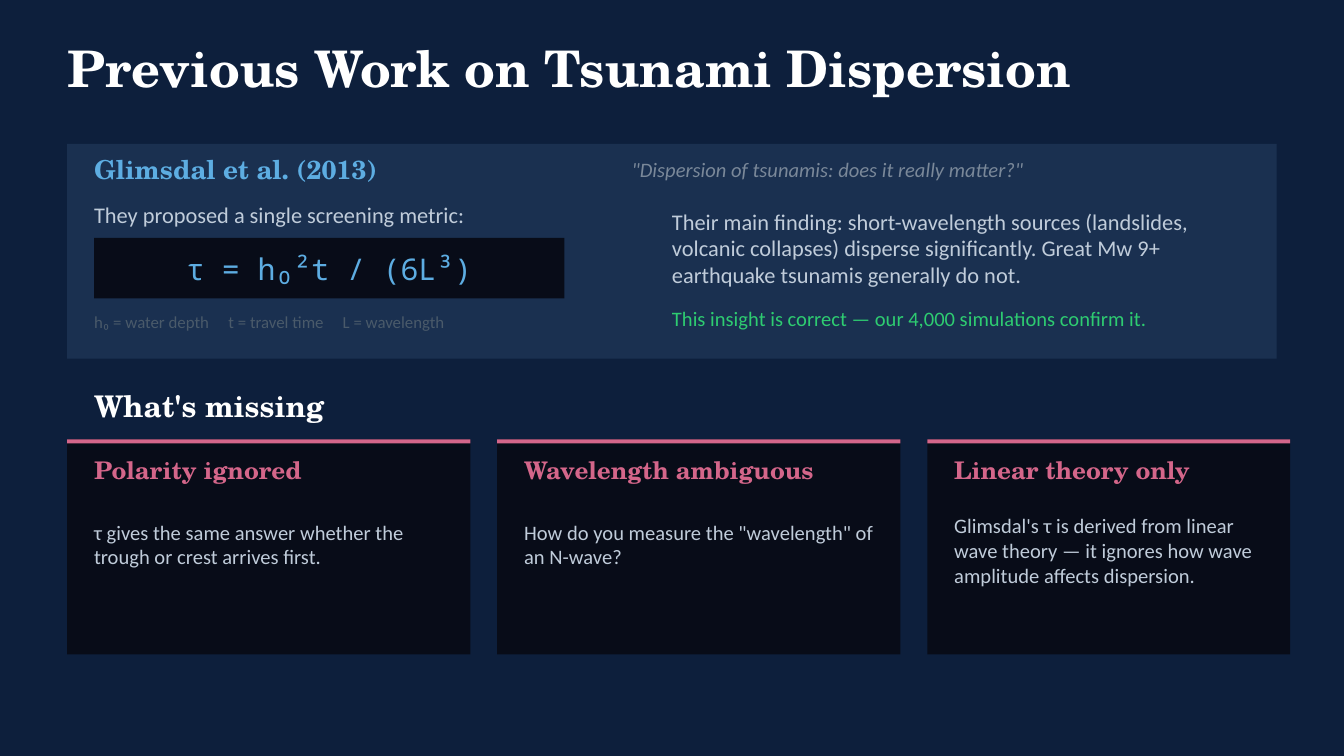
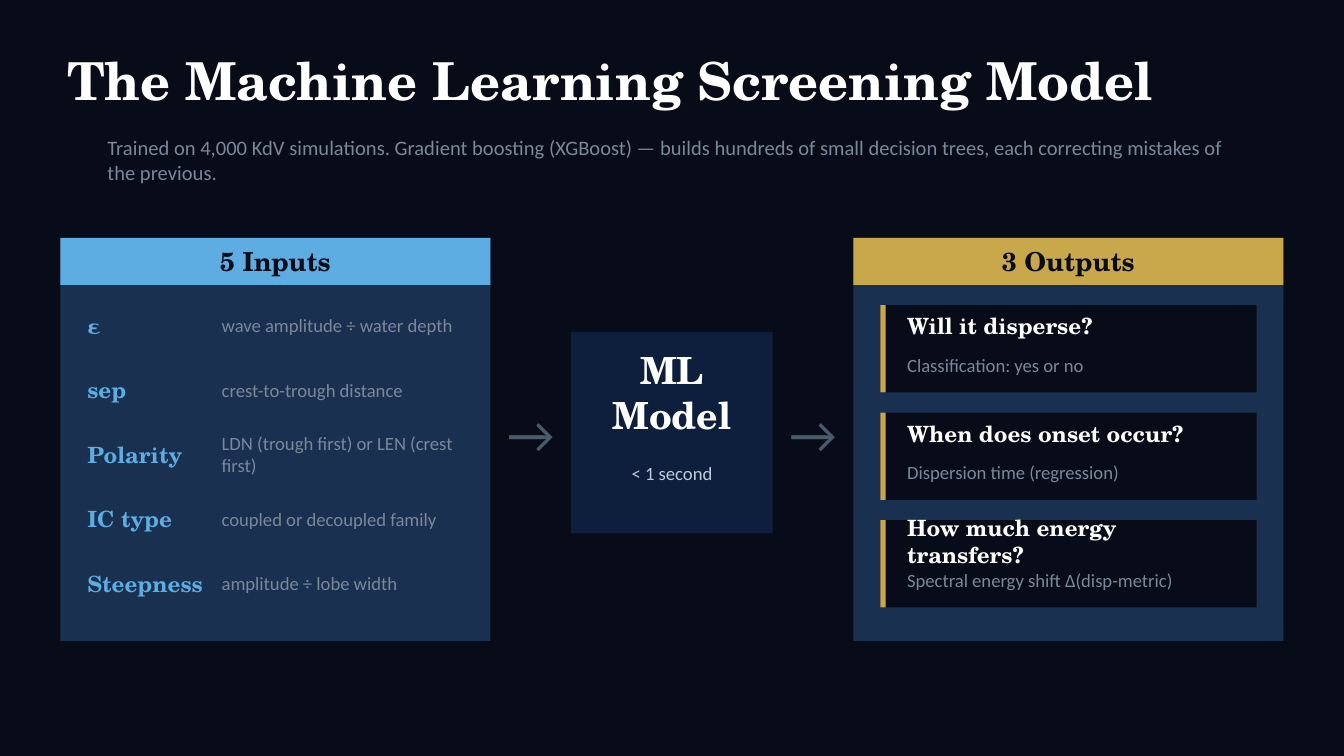
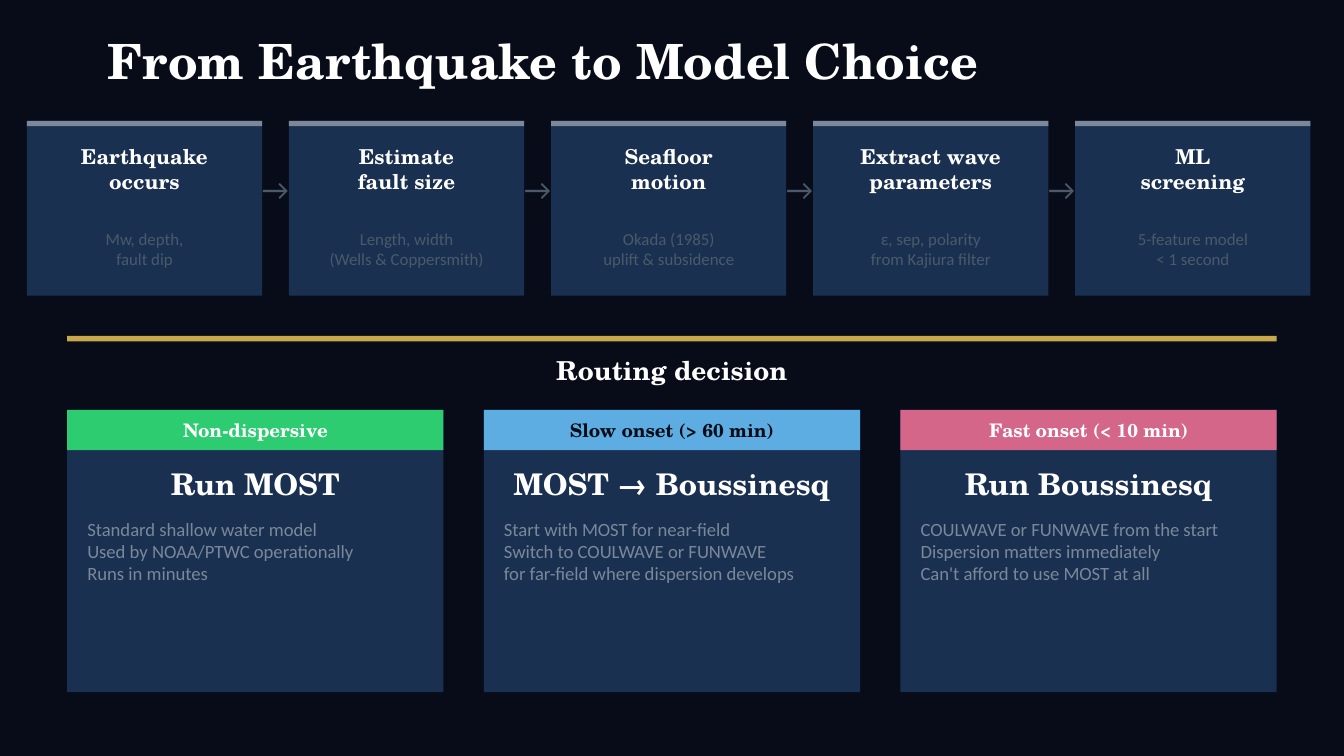
from lxml.etree import SubElement
from pptx import Presentation
from pptx.dml.color import RGBColor
from pptx.enum.shapes import MSO_SHAPE
from pptx.enum.text import MSO_ANCHOR, PP_ALIGN
from pptx.oxml.ns import qn
from pptx.util import Pt

PX = 9144  # 100 px to the inch
COLORS = {
    "navy": "0D1F3C", "ink": "080C18", "panel": "1A3050", "white": "FFFFFF",
    "pale": "C0CCDA", "gray": "7A8899", "dim": "4A5A6A", "blue": "5DADE2",
    "green": "2ECC71", "pink": "D4668A", "gold": "C9A84C",
}
HEAD = {"name": "TeX Gyre Schola", "bold": True}
BODY = {"name": "Calibri"}
QUOTE = {"name": "Calibri", "italic": True}
MONO = {"name": "Noto Sans Mono"}


def box(s, x, y, w, h, fill=None):
    """Add a filled rectangle, or a text box when there is no fill."""
    at = [v * PX for v in (x, y, w, h)]
    if fill is None:
        return s.shapes.add_textbox(*at)
    sp = s.shapes.add_shape(MSO_SHAPE.RECTANGLE, *at)
    sp.shadow.inherit = False
    sp.fill.solid()
    sp.fill.fore_color.rgb = RGBColor.from_string(COLORS[fill])
    sp.line.fill.background()
    return sp


def write(sp, text, size, color, font=BODY, align=PP_ALIGN.LEFT, anchor=MSO_ANCHOR.MIDDLE):
    """Put text in a shape, one paragraph per line."""
    tf = sp.text_frame
    frame = {"word_wrap": True, "vertical_anchor": anchor, "margin_left": 0,
             "margin_right": 0, "margin_top": 0, "margin_bottom": 0}
    for key, value in frame.items():
        setattr(tf, key, value)
    for i, line in enumerate(text.split("\n")):
        p = tf.add_paragraph() if i else tf.paragraphs[0]
        p.alignment = align
        r = p.add_run()
        r.text = line
        for key, value in {**font, "size": Pt(size)}.items():
            setattr(r.font, key, value)
        r.font.color.rgb = RGBColor.from_string(COLORS[color])
    return tf


CENTER = PP_ALIGN.CENTER
prs = Presentation()
prs.slide_width = 1000 * PX
prs.slide_height = prs.slide_width * 9 // 16

slides = []
for title, size, x, y, bg in [
    ("Previous Work on Tsunami Dispersion", 27, 50, 25, "navy"),
    ("The Machine Learning Screening Model", 28, 50, 34, "ink"),
    ("From Earthquake to Model Choice", 26, 80, 20, "ink"),
]:
    s = prs.slides.add_slide(prs.slide_layouts[6])
    s.background.fill.solid()
    s.background.fill.fore_color.rgb = RGBColor.from_string(COLORS[bg])
    write(box(s, x, y, 900, 50), title, size, "white", HEAD)
    slides.append(s)
previous, model, routing = slides

# Previous work: the study and its metric
s = previous
box(s, 50, 107, 900, 160, "panel")
write(box(s, 70, 112, 400, 28), "Glimsdal et al. (2013)", 14, "blue", HEAD)
write(box(s, 470, 112, 460, 28), '"Dispersion of tsunamis: does it really matter?"', 11, "gray", QUOTE)
write(box(s, 70, 147, 450, 25), "They proposed a single screening metric:", 12, "pale")
box(s, 70, 177, 350, 45, "ink")
write(box(s, 70, 177, 350, 45), "τ = h₀²t / (6L³)", 16, "blue", MONO, CENTER)
tf = write(box(s, 70, 227, 350, 25),
           "h₀ = water depth\tt = travel time\tL = wavelength", 9, "dim")
tabs = SubElement(tf.paragraphs[0]._p.get_or_add_pPr(), qn("a:tabLst"))
for pos in (100, 185):
    SubElement(tabs, qn("a:tab"), pos=str(pos * PX), algn="l")
write(box(s, 500, 152, 430, 65),
      "Their main finding: short-wavelength sources (landslides, volcanic collapses) "
      "disperse significantly. Great Mw 9+ earthquake tsunamis generally do not.", 12, "pale")
write(box(s, 500, 222, 430, 30),
      "This insight is correct — our 4,000 simulations confirm it.", 11, "green")

# Previous work: the gaps
write(box(s, 70, 287, 900, 30), "What's missing", 16, "white", HEAD)
gaps = [
    ("Polarity ignored", 300, 380, 50,
     "τ gives the same answer whether the trough or crest arrives first."),
    ("Wavelength ambiguous", 300, 380, 50,
     'How do you measure the "wavelength" of an N-wave?'),
    ("Linear theory only", 270, 382, 55,
     "Glimsdal's τ is derived from linear wave theory — it ignores how wave "
     "amplitude affects dispersion."),
]
for i, (name, w, y, h, detail) in enumerate(gaps):
    x = 50 + 320 * i
    box(s, x, 327, w, 160, "ink")
    box(s, x, 327, w, 3, "pink")
    write(box(s, x + 20, 337, w - 40, 25), name, 13, "pink", HEAD)
    write(box(s, x + 20, y, w - 40, h), detail, 11, "pale")

# Screening model: inputs, model, outputs
s = model
write(box(s, 80, 99, 840, 40),
      "Trained on 4,000 KdV simulations. Gradient boosting (XGBoost) — builds hundreds "
      "of small decision trees, each correcting mistakes of the previous.", 11, "gray")
for x, name, color in [(45, "5 Inputs", "blue"), (635, "3 Outputs", "gold")]:
    box(s, x, 177, 320, 300, "panel")
    write(box(s, x, 177, 320, 35, color), name, 14, "ink", HEAD, CENTER)

inputs = [
    ("ε", "wave amplitude ÷ water depth"),
    ("sep", "crest-to-trough distance"),
    ("Polarity", "LDN (trough first) or LEN (crest first)"),
    ("IC type", "coupled or decoupled family"),
    ("Steepness", "amplitude ÷ lobe width"),
]
for i, (name, meaning) in enumerate(inputs):
    y = 222 + 48 * i
    write(box(s, 65, y, 100, 40), name, 12, "blue", HEAD)
    write(box(s, 165, y, 180, 40), meaning, 10, "gray")

box(s, 425, 247, 150, 150, "navy")
write(box(s, 425, 252, 150, 80), "ML\nModel", 20, "white", HEAD, CENTER)
write(box(s, 425, 332, 150, 40), "< 1 second", 10, "pale", align=CENTER)
for x in (370, 580):
    write(box(s, x, 297, 50, 50), "→", 28, "dim", align=CENTER)

outputs = [
    ("Will it disperse?", "Classification: yes or no"),
    ("When does onset occur?", "Dispersion time (regression)"),
    ("How much energy transfers?", "Spectral energy shift Δ(disp-metric)"),
]
for i, (question, answer) in enumerate(outputs):
    y = 227 + 80 * i
    box(s, 655, y, 280, 65, "ink")
    box(s, 655, y, 4, 65, "gold")
    write(box(s, 675, y + 3, 240, 25), question, 12, "white", HEAD)
    write(box(s, 675, y + 32, 240, 25), answer, 10, "gray")

# Model choice: the chain of steps
s = routing
steps = [
    ("Earthquake\noccurs", "Mw, depth,\nfault dip"),
    ("Estimate\nfault size", "Length, width\n(Wells & Coppersmith)"),
    ("Seafloor\nmotion", "Okada (1985)\nuplift & subsidence"),
    ("Extract wave\nparameters", "ε, sep, polarity\nfrom Kajiura filter"),
    ("ML\nscreening", "5-feature model\n< 1 second"),
]
for i, (name, detail) in enumerate(steps):
    x = 20 + 195 * i
    box(s, x, 90, 175, 130, "panel")
    box(s, x, 90, 175, 4, "gray")
    write(box(s, x, 98, 175, 55), name, 11, "white", HEAD, CENTER)
    write(box(s, x, 160, 175, 50), detail, 9, "dim", align=CENTER)
    if i < len(steps) - 1:
        write(box(s, x + 165, 120, 40, 40), "→", 16, "dim", align=CENTER)

# Model choice: the three routes
box(s, 50, 250, 900, 4, "gold")
write(box(s, 50, 260, 900, 30), "Routing decision", 14, "white", HEAD, CENTER)
routes = [
    ("Non-dispersive", "green", "white", "Run MOST",
     "Standard shallow water model\nUsed by NOAA/PTWC operationally\nRuns in minutes"),
    ("Slow onset (> 60 min)", "blue", "ink", "MOST → Boussinesq",
     "Start with MOST for near-field\nSwitch to COULWAVE or FUNWAVE\n"
     "for far-field where dispersion develops"),
    ("Fast onset (< 10 min)", "pink", "white", "Run Boussinesq",
     "COULWAVE or FUNWAVE from the start\nDispersion matters immediately\n"
     "Can't afford to use MOST at all"),
]
for i, (case, band, ink, choice, detail) in enumerate(routes):
    x = 50 + 310 * i
    box(s, x, 305, 280, 210, "panel")
    write(box(s, x, 305, 280, 30, band), case, 10, ink, HEAD, CENTER)
    write(box(s, x, 340, 280, 40), choice, 16, "white", HEAD, CENTER)
    write(box(s, x + 15, 385, 250, 110), detail, 10, "gray", anchor=MSO_ANCHOR.TOP)

prs.save("out.pptx")
